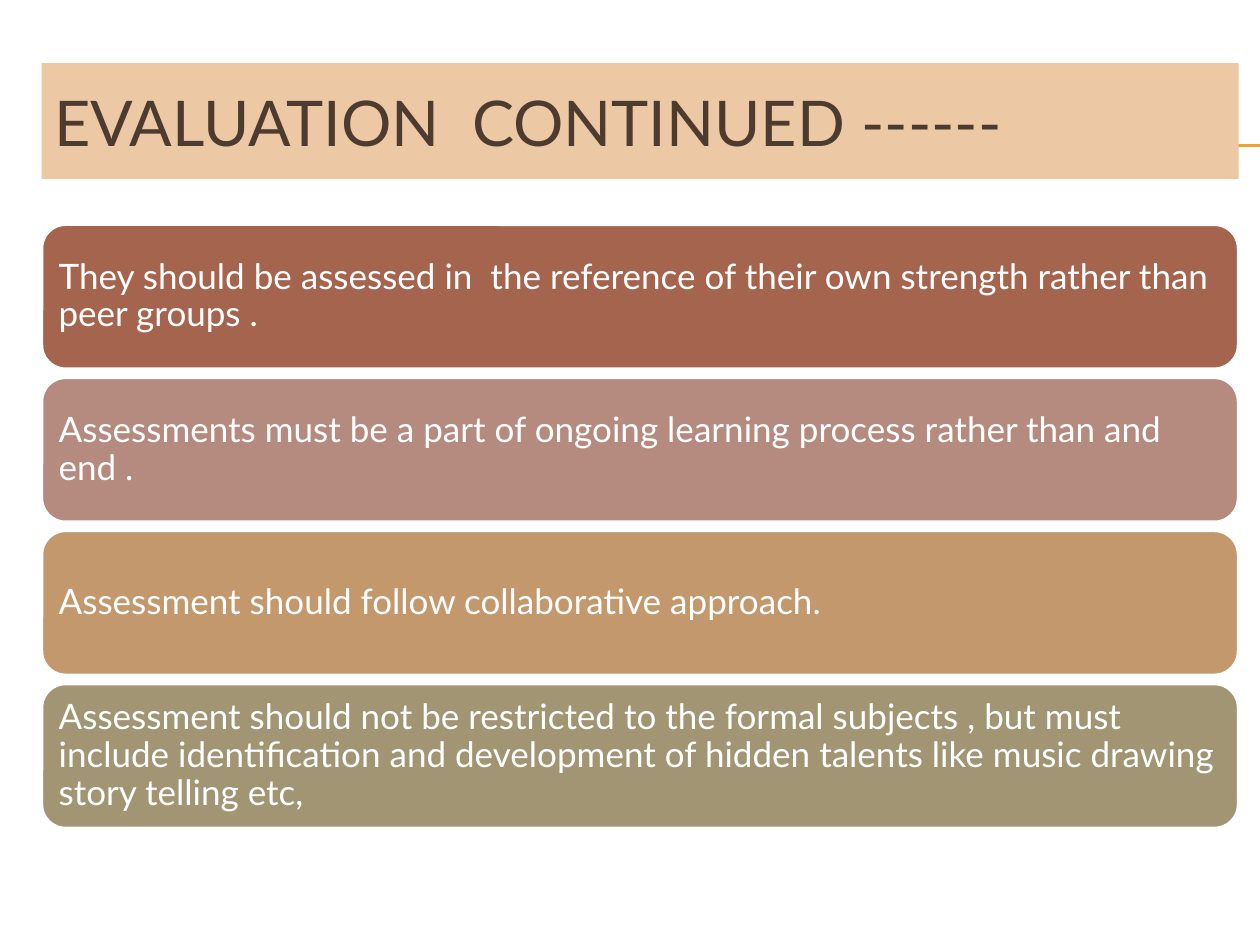
"""Build the slide listing further evaluation principles as stacked panels."""
from dataclasses import dataclass

from lxml import etree
from pptx import Presentation
from pptx.dml.color import RGBColor
from pptx.enum import shapes, text
from pptx.oxml import ns
from pptx.util import Inches, Pt


@dataclass(frozen=True)
class Theme:
    font: str = "Lato"
    title_size: int = 36
    panel_size: int = 20
    title_fill: str = "ECC8A4"
    title_ink: str = "4E3B30"
    rule: str = "F0A22E"
    white: str = "FFFFFF"
    panels: tuple = ("A5644E", "B58B80", "C3986D", "A19574")


theme = Theme()
LEFT, WIDTH = 0.33, 9.5
PANEL_TOP, PANEL_HEIGHT, PANEL_PITCH = 1.78, 1.15, 1.215

principles = [
    "They should be assessed in  the reference of their own strength rather than  peer groups .",
    "Assessments must be a part of ongoing learning process rather than and end .",
    "Assessment should follow collaborative approach.",
    "Assessment should not be restricted to the formal subjects , but must include "
    "identification and development of hidden talents like music drawing story telling etc,",
]


def fill_shape(shape, color):
    shape.fill.solid()
    shape.fill.fore_color.rgb = RGBColor.from_string(color)


def write_text(shape, words, size, color):
    frame = shape.text_frame
    frame.text = words
    frame.word_wrap = True
    frame.auto_size = text.MSO_AUTO_SIZE.NONE
    frame.vertical_anchor = text.MSO_ANCHOR.MIDDLE
    paragraph = frame.paragraphs[0]
    paragraph.alignment = text.PP_ALIGN.LEFT
    font = paragraph.runs[0].font
    font.name = theme.font
    font.size = Pt(size)
    font.color.rgb = RGBColor.from_string(color)
    return paragraph


prs = Presentation()
prs.slide_width, prs.slide_height = Inches(10), Inches(7.5)
slide = prs.slides.add_slide(prs.slide_layouts[5])

for rule_y in (1.15, 1.16):
    rule = slide.shapes.add_connector(
        shapes.MSO_CONNECTOR.STRAIGHT,
        Inches(0.56), Inches(rule_y), Inches(10), Inches(rule_y))
    rule.line.color.rgb = RGBColor.from_string(theme.rule)
    rule.line.width = Pt(0.75)
    etree.SubElement(rule._element.spPr, ns.qn("a:effectLst"))

title = slide.shapes.title
slide.shapes._spTree.append(title._element)
title.left, title.top = Inches(LEFT), Inches(0.5)
title.width, title.height = Inches(WIDTH), Inches(0.92)
fill_shape(title, theme.title_fill)
write_text(title, "EVALUATION  CONTINUED ------", theme.title_size, theme.title_ink)

for row, (principle, color) in enumerate(zip(principles, theme.panels)):
    panel = slide.shapes.add_shape(
        shapes.MSO_SHAPE.ROUNDED_RECTANGLE,
        Inches(LEFT), Inches(PANEL_TOP + row * PANEL_PITCH),
        Inches(WIDTH), Inches(PANEL_HEIGHT))
    panel.shadow.inherit = False
    fill_shape(panel, color)
    panel.line.color.rgb = RGBColor.from_string(theme.white)
    panel.line.width = Pt(2)
    paragraph = write_text(panel, principle, theme.panel_size, theme.white)
    paragraph.line_spacing = 0.9
    paragraph.space_after = Pt(7)
    frame = panel.text_frame
    frame.margin_left = frame.margin_right = Inches(0.08)
    frame.margin_top = frame.margin_bottom = Inches(0.08)

prs.save("out.pptx")
